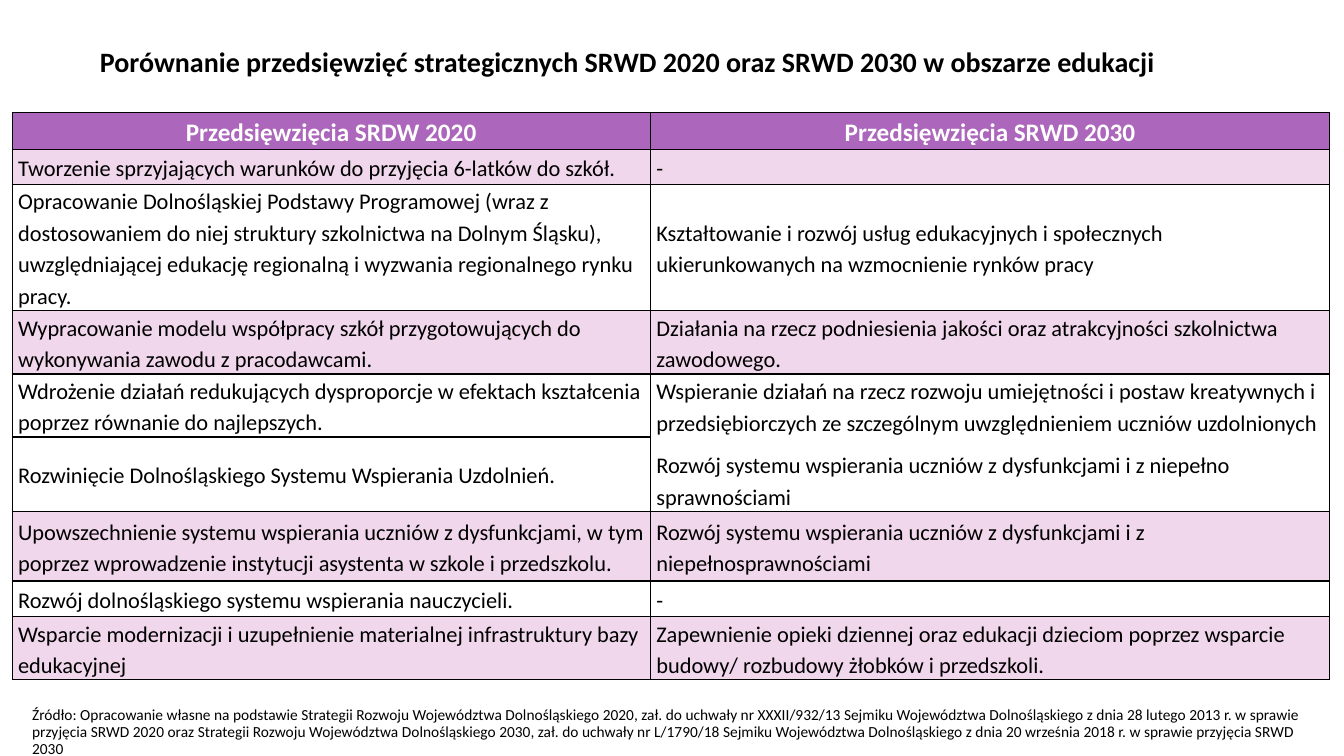
import pptx
import pptx.util
import pptx.dml.color
import pptx.enum.text
import pptx.oxml
from dataclasses import dataclass
from pptx.util import Inches

ALIGN = pptx.enum.text.PP_ALIGN
ANCHOR = pptx.enum.text.MSO_ANCHOR


@dataclass(frozen=True)
class Theme:
    font: str = "Calibri"
    ink: str = "000000"
    light: str = "FFFFFF"
    head: str = "AC66BB"
    band: str = "F1D7EC"
    title: int = 20
    header: int = 18
    body: int = 16
    note: int = 11


THEME = Theme()

TITLE = "Porównanie przedsięwzięć strategicznych SRWD 2020 oraz SRWD 2030 w obszarze edukacji"
SOURCE = (
    "Źródło: Opracowanie własne na podstawie Strategii Rozwoju Województwa Dolnośląskiego 2020, "
    "zał. do uchwały nr XXXII/932/13 Sejmiku Województwa Dolnośląskiego z dnia 28 lutego 2013 r. "
    "w sprawie przyjęcia SRWD 2020 oraz Strategii Rozwoju Województwa Dolnośląskiego 2030, "
    "zał. do uchwały nr L/1790/18 Sejmiku Województwa Dolnośląskiego z dnia 20 września 2018 r. "
    "w sprawie przyjęcia SRWD 2030"
)
WIDTHS = (6.33, 6.74)

# Each row: height, banded, SRWD 2020 text, SRWD 2030 text (None joins the cell above)
ROWS = [
    (0.36, False, "Przedsięwzięcia SRDW 2020", "Przedsięwzięcia SRWD 2030"),
    (0.35, True, "Tworzenie sprzyjających warunków do przyjęcia 6-latków do szkół.", "-"),
    (1.25, False,
     "Opracowanie Dolnośląskiej Podstawy Programowej (wraz z dostosowaniem do niej struktury "
     "szkolnictwa na Dolnym Śląsku), uwzględniającej edukację regionalną i wyzwania "
     "regionalnego rynku pracy.",
     "Kształtowanie i rozwój usług edukacyjnych i społecznych ukierunkowanych na wzmocnienie "
     "rynków pracy"),
    (0.63, True,
     "Wypracowanie modelu współpracy szkół przygotowujących do wykonywania zawodu z pracodawcami.",
     "Działania na rzecz podniesienia jakości oraz atrakcyjności szkolnictwa zawodowego."),
    (0.62, False,
     "Wdrożenie działań redukujących dysproporcje w efektach kształcenia poprzez równanie do "
     "najlepszych.",
     "Wspieranie działań na rzecz rozwoju umiejętności i postaw kreatywnych i przedsiębiorczych "
     "ze szczególnym uwzględnieniem uczniów uzdolnionych\n"
     "Rozwój systemu wspierania uczniów z dysfunkcjami i z niepełno sprawnościami"),
    (0.74, False, "Rozwinięcie Dolnośląskiego Systemu Wspierania Uzdolnień.", None),
    (0.69, True,
     "Upowszechnienie systemu wspierania uczniów z dysfunkcjami, w tym poprzez wprowadzenie "
     "instytucji asystenta w szkole i przedszkolu.",
     "Rozwój systemu wspierania uczniów z dysfunkcjami i z niepełnosprawnościami"),
    (0.35, False, "Rozwój dolnośląskiego systemu wspierania nauczycieli.", "-"),
    (0.63, True,
     "Wsparcie modernizacji i uzupełnienie materialnej infrastruktury bazy edukacyjnej",
     "Zapewnienie opieki dziennej oraz edukacji dzieciom poprzez wsparcie budowy/ rozbudowy "
     "żłobków i przedszkoli."),
]


def write(frame, text, size, color=THEME.ink, bold=False, align=ALIGN.LEFT,
          line=0.9, before=0, after=0):
    """Fill a text frame, one paragraph per line of text."""
    frame.word_wrap = True
    for i, part in enumerate(text.split("\n")):
        para = frame.paragraphs[0] if i == 0 else frame.add_paragraph()
        para.alignment = align
        para.line_spacing = line
        para.space_before = pptx.util.Pt(before)
        para.space_after = pptx.util.Pt(after)
        run = para.add_run()
        run.text = part
        run.font.name = THEME.font
        run.font.size = pptx.util.Pt(size)
        run.font.bold = bold
        run.font.color.rgb = pptx.dml.color.RGBColor.from_string(color)


def paint(cell, color):
    """Set margins, fill and a thin border on all sides of a cell."""
    cell.margin_left = cell.margin_right = Inches(0.06)
    cell.margin_top = cell.margin_bottom = 0
    props = cell._tc.get_or_add_tcPr()
    for side in ("lnL", "lnR", "lnT", "lnB"):
        props.append(pptx.oxml.parse_xml(
            f'<a:{side} xmlns:a="http://schemas.openxmlformats.org/drawingml/2006/main" w="12700">'
            f'<a:solidFill><a:srgbClr val="{THEME.ink}"/></a:solidFill></a:{side}>'))
    if color:
        cell.fill.solid()
        cell.fill.fore_color.rgb = pptx.dml.color.RGBColor.from_string(color)
    else:
        cell.fill.background()


def add_title(slide):
    title = slide.shapes.title
    title.left, title.top = Inches(0.89), Inches(0.25)
    title.width, title.height = Inches(11.5), Inches(0.76)
    title.text_frame.vertical_anchor = ANCHOR.MIDDLE
    write(title.text_frame, TITLE, THEME.title, bold=True)


def add_grid(slide):
    high = sum(row[0] for row in ROWS)
    table = slide.shapes.add_table(
        len(ROWS), len(WIDTHS), Inches(0.12), Inches(1.12),
        Inches(sum(WIDTHS)), Inches(high)).table
    table.horz_banding = False
    for col, width in zip(table.columns, WIDTHS):
        col.width = Inches(width)
    for r, (height, banded, *texts) in enumerate(ROWS):
        table.rows[r].height = Inches(height)
        top = r == 0
        fill = THEME.head if top else THEME.band if banded else None
        for c, text in enumerate(texts):
            cell = table.cell(r, c)
            paint(cell, fill)
            if text is None:
                table.cell(r - 1, c).merge(cell)
                continue
            cell.vertical_anchor = ANCHOR.TOP if top else ANCHOR.MIDDLE
            write(cell.text_frame, text,
                  size=THEME.header if top else THEME.body,
                  color=THEME.light if top else THEME.ink, bold=top,
                  align=ALIGN.CENTER if top else ALIGN.LEFT,
                  line=1.15, before=4, after=4)


def add_note(slide):
    box = slide.shapes.add_textbox(Inches(0.22), Inches(6.97), Inches(12.9), Inches(0.7))
    write(box.text_frame, SOURCE, THEME.note, before=10)


def main():
    deck = pptx.Presentation()
    deck.slide_width, deck.slide_height = Inches(13.33), Inches(7.5)
    slide = deck.slides.add_slide(deck.slide_layouts[5])
    add_title(slide)
    add_grid(slide)
    add_note(slide)
    deck.save("out.pptx")


if __name__ == "__main__":
    main()
